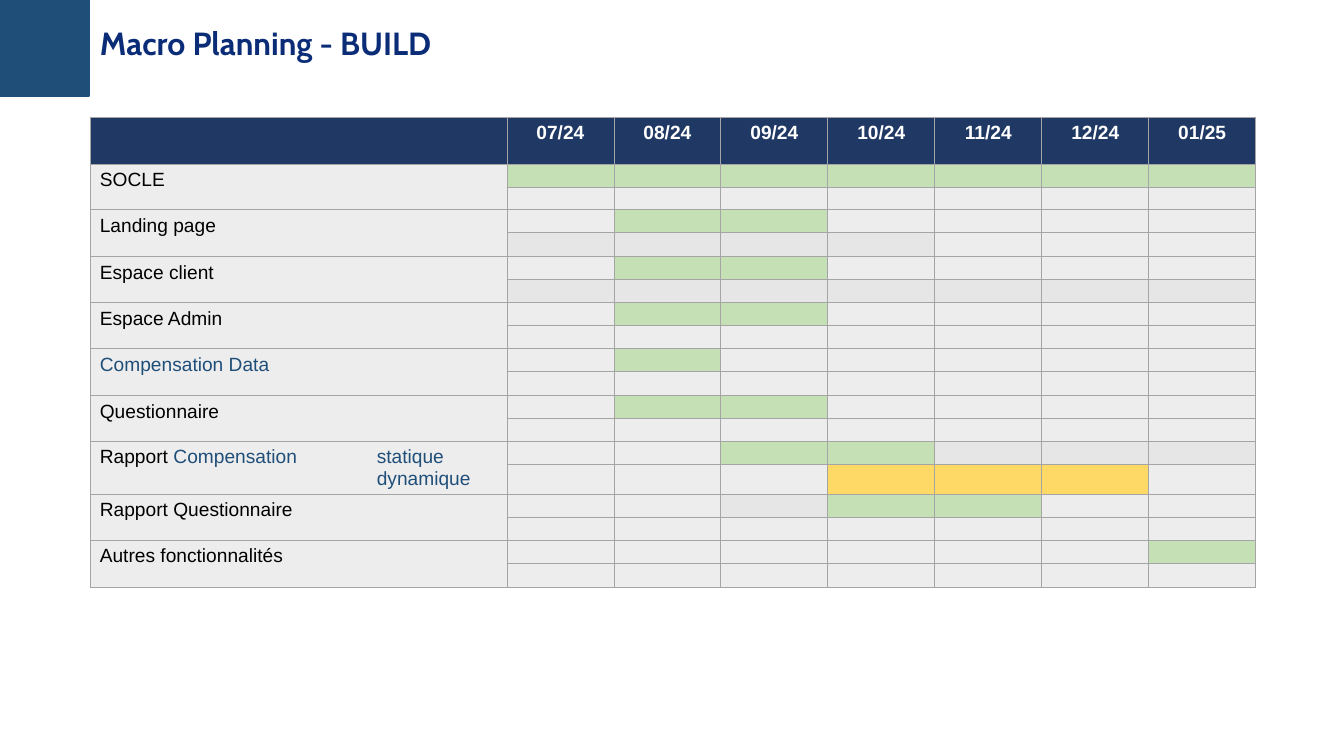
from lxml import etree
from pptx import Presentation
from pptx.dml.color import RGBColor
from pptx.enum.shapes import MSO_SHAPE
from pptx.enum.text import MSO_ANCHOR, MSO_AUTO_SIZE, PP_ALIGN
from pptx.oxml.ns import qn
from pptx.util import Emu, Pt

RECT = MSO_SHAPE.RECTANGLE
MIDDLE = MSO_ANCHOR.MIDDLE
NO_FIT = MSO_AUTO_SIZE.NONE
LEFT, CENTER = PP_ALIGN.LEFT, PP_ALIGN.CENTER
TITLE_ONLY = 5
SCALE = 914400 / 98.4

COLORS = {
    "block": "1F4E79", "title": "0B2D78", "header": "203864",
    "border": "A5A5A5", "white": "FFFFFF", "black": "000000",
    "plain": "EDEDED", "shade": "E7E6E6", "green": "C5E0B4", "yellow": "FFD966",
}
FILLS = {".": "plain", "s": "shade", "g": "green", "y": "yellow"}
FORMATS = {
    "title": {"name": "Cabin", "size": Pt(23.4), "bold": True},
    "header": {"name": "Arial", "size": Pt(14), "bold": True},
    "label": {"name": "Arial", "size": Pt(14), "bold": False},
}

MONTHS = ["07/24", "08/24", "09/24", "10/24", "11/24", "12/24", "01/25"]
# Each task: label paragraphs made of (text, colour) runs, then its two half rows
TASKS = [
    ([[("SOCLE", "black")]], "ggggggg", "......."),
    ([[("Landing page", "black")]], ".gg....", "ssss..."),
    ([[("Espace client", "black")]], ".gg....", "sssssss"),
    ([[("Espace Admin", "black")]], ".gg....", "......."),
    ([[("Compensation Data", "block")]], ".g.....", "......."),
    ([[("Questionnaire", "black")]], ".gg....", "......."),
    ([[("Rapport ", "black"), ("Compensation\tstatique", "block")],
      [("\tdynamique", "block")]], "..ggsss", "...yyy."),
    ([[("Rapport Questionnaire", "black")]], "..sgg..", "......."),
    ([[("Autres fonctionnalités", "black")]], "......g", "......."),
]
LABEL_WIDTH, MONTH_WIDTH = 417, 107
HEADER_HEIGHT, HALF_ROW = 47, 23
TALLER_ROWS = {4: 24, 10: 24, 14: 30, 18: 24}
LABEL_TAB = 277


def px(n):
    return Emu(round(n * SCALE))


def rgb(name):
    return RGBColor.from_string(COLORS[name])


class Deck:
    def __init__(self, width, height):
        self.prs = Presentation()
        self.prs.slide_width, self.prs.slide_height = px(width), px(height)
        layout = self.prs.slide_layouts[TITLE_ONLY]
        self.slide = self.prs.slides.add_slide(layout)

    def run(self, p, text, style, color):
        r = p.add_run()
        r.text = text
        for name, value in FORMATS[style].items():
            setattr(r.font, name, value)
        r.font.color.rgb = rgb(color)

    def rect(self, x, y, w, h, color):
        sp = self.slide.shapes.add_shape(RECT, px(x), px(y), px(w), px(h))
        sp.shadow.inherit = False
        sp.fill.solid()
        sp.fill.fore_color.rgb = rgb(color)
        sp.line.color.rgb = rgb(color)
        sp.line.width = Pt(2)

    def title(self, text, x, y, w, h):
        sp = self.slide.shapes.title
        sp.left, sp.top, sp.width, sp.height = px(x), px(y), px(w), px(h)
        tf = sp.text_frame
        frame = {"word_wrap": True, "auto_size": NO_FIT, "vertical_anchor": MIDDLE}
        frame |= {f"margin_{side}": px(10) for side in ("left", "top", "right", "bottom")}
        for name, value in frame.items():
            setattr(tf, name, value)
        p = tf.paragraphs[0]
        p.alignment, p.line_spacing = LEFT, 0.9
        self.run(p, text, "title", "title")

    def table(self, x, y, widths, heights):
        frame = self.slide.shapes.add_table(
            len(heights), len(widths), px(x), px(y), px(sum(widths)), px(sum(heights)))
        table = frame.table
        table.first_row = table.horz_banding = False
        for column, width in zip(table.columns, widths):
            column.width = px(width)
        for row, height in zip(table.rows, heights):
            row.height = px(height)
        return table

    def cell(self, cell, fill, paragraphs=(), style="label", align=LEFT, tab=None):
        self.borders(cell)
        cell.fill.solid()
        cell.fill.fore_color.rgb = rgb(fill)
        tf = cell.text_frame
        if not paragraphs:
            # A small paragraph mark keeps empty half rows from growing
            etree.SubElement(tf.paragraphs[0]._p, qn("a:endParaRPr"), sz="600")
        for i, runs in enumerate(paragraphs):
            p = tf.add_paragraph() if i else tf.paragraphs[0]
            p.alignment = align
            if tab:
                tabs = etree.SubElement(p._p.get_or_add_pPr(), qn("a:tabLst"))
                etree.SubElement(tabs, qn("a:tab"), pos=str(px(tab)), algn="l")
            for text, color in runs:
                self.run(p, text, style, color)

    def borders(self, cell):
        tc_pr = cell._tc.get_or_add_tcPr()
        for side in ("lnL", "lnR", "lnT", "lnB"):
            ln = etree.SubElement(tc_pr, qn(f"a:{side}"), w=str(Pt(0.75)))
            fill = etree.SubElement(ln, qn("a:solidFill"))
            etree.SubElement(fill, qn("a:srgbClr"), val=COLORS["border"])

    def planning(self, x, y):
        """Draw the month header and two half rows per task."""
        widths = [LABEL_WIDTH] + [MONTH_WIDTH] * len(MONTHS)
        heights = [HEADER_HEIGHT] + [
            TALLER_ROWS.get(i, HALF_ROW) for i in range(1, 2 * len(TASKS) + 1)]
        table = self.table(x, y, widths, heights)
        self.cell(table.cell(0, 0), "header")
        for col, month in enumerate(MONTHS, 1):
            self.cell(table.cell(0, col), "header", [[(month, "white")]], "header", CENTER)
        for i, (label, *halves) in enumerate(TASKS):
            top = 1 + 2 * i
            tab = LABEL_TAB if len(label) > 1 else None
            self.cell(table.cell(top, 0), "plain", label, tab=tab)
            self.cell(table.cell(top + 1, 0), "plain")
            table.cell(top, 0).merge(table.cell(top + 1, 0))
            for row, half in enumerate(halves, top):
                for col, code in enumerate(half, 1):
                    self.cell(table.cell(row, col), FILLS[code])


def main():
    deck = Deck(1344, 756)
    deck.rect(0, 0, 89, 96, "block")
    deck.title("Macro Planning - BUILD", 90, 0, 1175, 91)
    deck.planning(90, 117)
    deck.prs.save("out.pptx")


if __name__ == "__main__":
    main()
